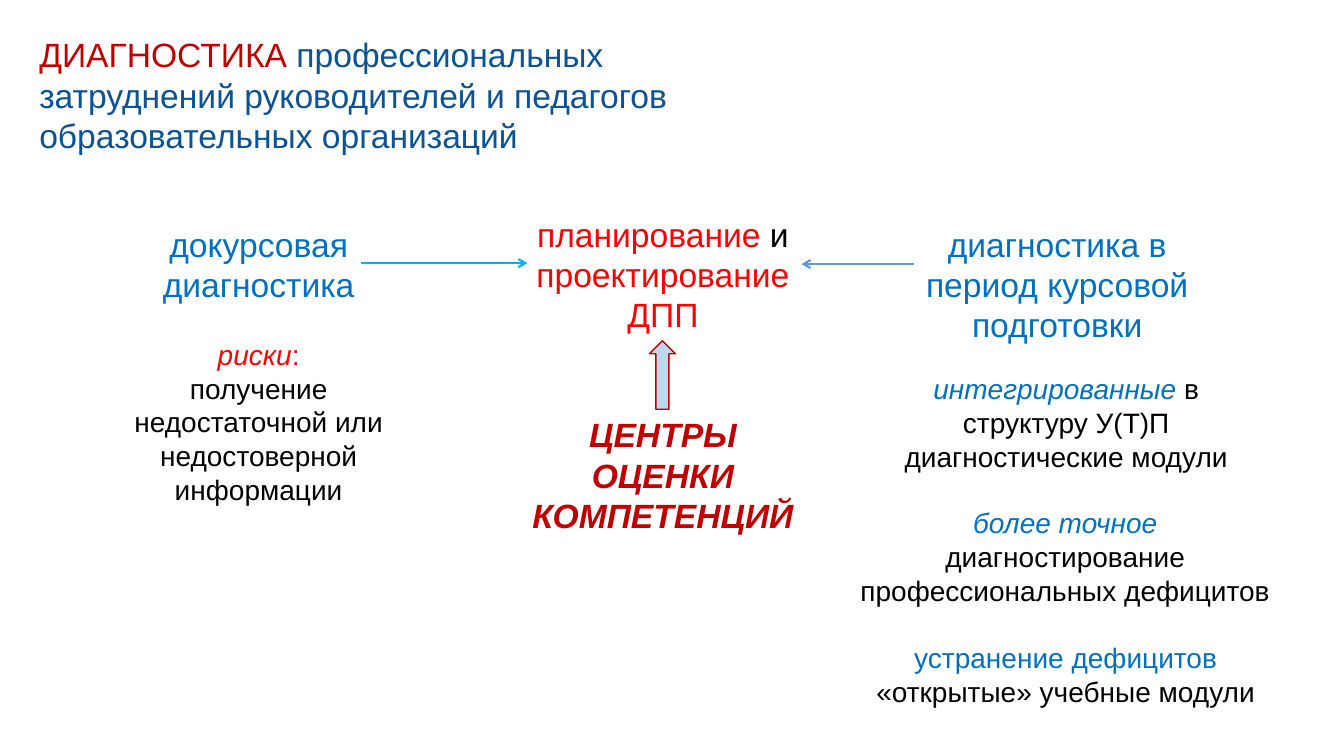
from dataclasses import dataclass
from lxml.etree import SubElement
from pptx import Presentation
from pptx.dml.color import RGBColor
from pptx.enum.shapes import MSO_CONNECTOR as Link, MSO_SHAPE as Preset
from pptx.enum.text import MSO_ANCHOR as Anchor, MSO_AUTO_SIZE as Fit, PP_ALIGN as Align
from pptx.oxml.ns import qn
from pptx.util import Inches, Pt


@dataclass(frozen=True)
class Theme:
    font: str = "Arial"
    heading: int = 24
    detail: int = 20
    navy: str = "0B5394"
    blue: str = "0070C0"
    red: str = "FF0000"
    crimson: str = "C00000"
    black: str = "000000"
    cyan: str = "00B0F0"
    steel: str = "5B9BD5"
    pale: str = "BDD7EE"


THEME = Theme()
COLUMN = 3.29


def rgb(value):
    return RGBColor.from_string(value)


def write(frame, size, paragraphs, align=Align.CENTER):
    settings = {"word_wrap": True, "auto_size": Fit.NONE, "vertical_anchor": Anchor.TOP}
    for name, value in settings.items():
        setattr(frame, name, value)
    for index, pieces in enumerate(paragraphs):
        paragraph = frame.paragraphs[0] if index == 0 else frame.add_paragraph()
        paragraph.alignment = align
        for words, color, *styles in pieces:
            run = paragraph.add_run()
            run.text = words
            run.font.color.rgb = rgb(color)
            formats = {"name": THEME.font, "size": Pt(size),
                       "bold": "bold" in styles, "italic": "italic" in styles}
            for name, value in formats.items():
                setattr(run.font, name, value)


def add_text(slide, box, size, *paragraphs):
    block = slide.shapes.add_textbox(*map(Inches, box))
    write(block.text_frame, size, paragraphs)


def add_arrow(slide, start, end, color):
    arrow = slide.shapes.add_connector(Link.STRAIGHT, *map(Inches, (*start, *end)))
    arrow.line.color.rgb = rgb(color)
    arrow.line.width = Pt(1.5)
    SubElement(arrow.line._get_or_add_ln(), qn("a:tailEnd"), type="arrow")
    SubElement(arrow._element.spPr, qn("a:effectLst"))


def add_heading(slide, box):
    title = slide.shapes.title
    title.left, title.top, title.width, title.height = map(Inches, box)
    write(title.text_frame, THEME.heading, [[
        ("ДИАГНОСТИКА ", THEME.crimson),
        ("профессиональных затруднений руководителей и педагогов "
         "образовательных организаций", THEME.navy)]], Align.LEFT)


def add_before_course(slide, left, top):
    add_text(slide, (left, top, COLUMN, 0.91), THEME.heading,
             [("докурсовая диагностика", THEME.blue)])
    add_text(slide, (left, top + 1.13, COLUMN, 1.78), THEME.detail,
             [("риски", THEME.red, "italic"), (":", THEME.red)],
             [("получение недостаточной или недостоверной информации", THEME.black)])
    add_arrow(slide, (left + 2.66, top + 0.44), (left + 4.31, top + 0.44), THEME.cyan)


def add_planning(slide, left, top):
    add_text(slide, (left, top, COLUMN, 1.31), THEME.heading,
             [("планирование", THEME.red), (" и ", THEME.black),
              ("проектирование ДПП", THEME.red)])
    add_text(slide, (left, top + 1.99, COLUMN, 1.31), THEME.heading,
             [("ЦЕНТРЫ", THEME.crimson, "bold", "italic")],
             [("ОЦЕНКИ КОМПЕТЕНЦИЙ", THEME.crimson, "bold", "italic")])
    support = slide.shapes.add_shape(
        Preset.UP_ARROW, *map(Inches, (left + 1.51, top + 1.31, 0.26, 0.68)))
    support.shadow.inherit = False
    support.fill.solid()
    support.fill.fore_color.rgb = rgb(THEME.pale)
    support.line.color.rgb = rgb(THEME.crimson)
    support.line.width = Pt(1)


def add_during_course(slide, left, top):
    add_text(slide, (left, top, COLUMN, 1.31), THEME.heading,
             [("диагностика в период курсовой подготовки", THEME.blue)])
    add_text(slide, (left, top + 1.47, 3.47, 1.11), THEME.detail,
             [("интегрированные", THEME.blue, "italic"),
              (" в структуру У(Т)П диагностические модули", THEME.black)])
    add_text(slide, (left - 0.47, top + 2.8, 4.39, 1.11), THEME.detail,
             [("более точное ", THEME.blue, "italic"),
              ("диагностирование профессиональных дефицитов", THEME.black)])
    add_text(slide, (left - 0.29, top + 4.14, 4.04, 0.77), THEME.detail,
             [("устранение дефицитов", THEME.blue)],
             [("«открытые» учебные модули", THEME.black)])
    add_arrow(slide, (left + 0.23, top + 0.45), (left - 0.89, top + 0.45), THEME.steel)


def main():
    deck = Presentation()
    deck.slide_width, deck.slide_height = Inches(13.33), Inches(7.5)
    slide = deck.slides.add_slide(deck.slide_layouts.get_by_name("Title Only"))
    add_heading(slide, (0.29, 0.29, 7.21, 1.31))
    add_before_course(slide, 0.92, 2.17)
    add_planning(slide, 4.93, 2.07)
    add_during_course(slide, 8.84, 2.17)
    deck.save("out.pptx")


if __name__ == "__main__":
    main()
